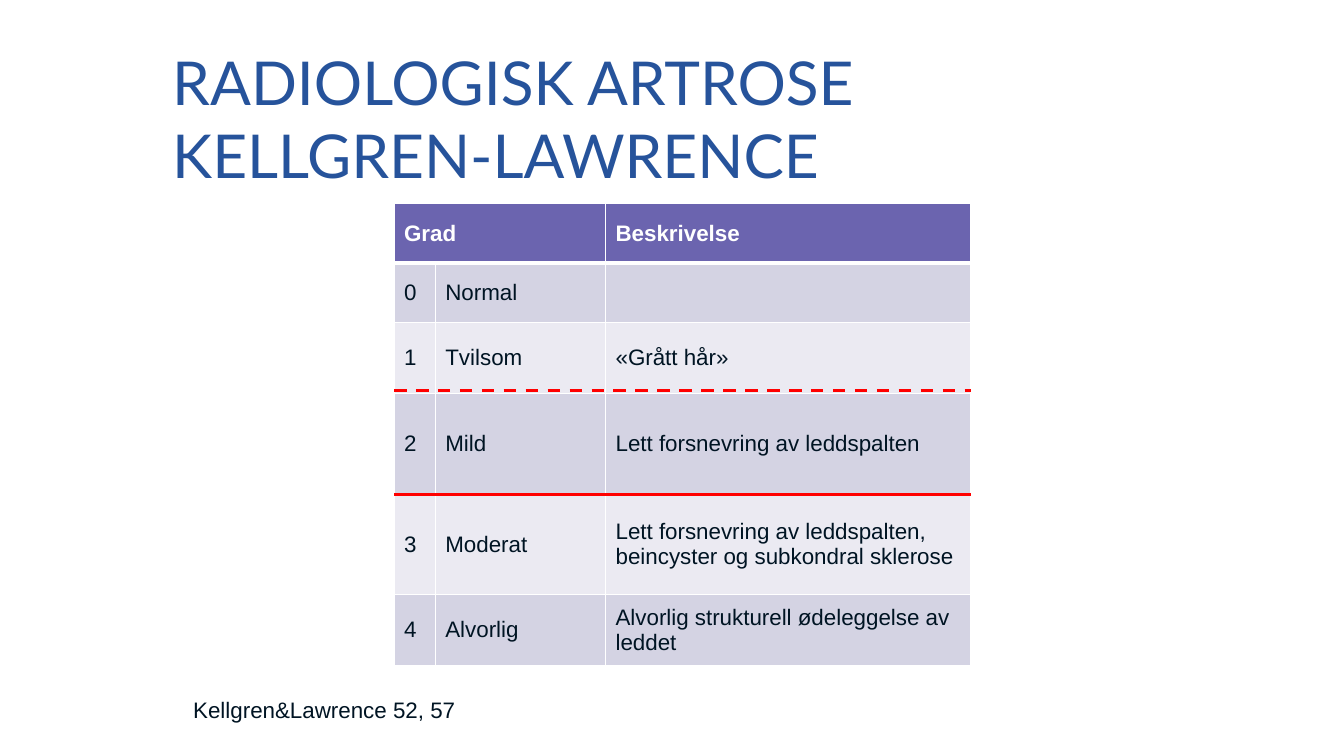
from lxml import etree
from pptx import Presentation
from pptx.dml.color import RGBColor
from pptx.enum.dml import MSO_LINE
from pptx.enum.shapes import MSO_CONNECTOR
from pptx.enum.text import MSO_ANCHOR, MSO_AUTO_SIZE, PP_ALIGN
from pptx.oxml.ns import qn
from pptx.util import Cm, Pt

DASH = MSO_LINE.DASH
STRAIGHT = MSO_CONNECTOR.STRAIGHT
TOP, MIDDLE = MSO_ANCHOR.TOP, MSO_ANCHOR.MIDDLE
NO_FIT = MSO_AUTO_SIZE.NONE
LEFT = PP_ALIGN.LEFT

BLUE = RGBColor(0x26, 0x53, 0x9B)
PURPLE = RGBColor(0x6B, 0x64, 0xAF)
LILAC = RGBColor(0xD4, 0xD3, 0xE3)
PALE = RGBColor(0xEB, 0xEA, 0xF2)
INK = RGBColor(0x00, 0x14, 0x23)
WHITE = RGBColor(0xFF, 0xFF, 0xFF)
RED = RGBColor(0xFF, 0x00, 0x00)

# Content
TITLE = "RADIOLOGISK ARTROSE\vKELLGREN-LAWRENCE"
GRADES = [
    ("Grad", "", "Beskrivelse"),
    ("0", "Normal", ""),
    ("1", "Tvilsom", "«Grått hår»"),
    ("2", "Mild", "Lett forsnevring av leddspalten"),
    ("3", "Moderat", "Lett forsnevring av leddspalten, beincyster og subkondral sklerose"),
    ("4", "Alvorlig", "Alvorlig strukturell ødeleggelse av leddet"),
]
CITATION = "Kellgren&Lawrence 52, 57"

# Layout in centimetres
TABLE_LEFT, TABLE_TOP = 9.93, 5.13
COLUMN_WIDTHS = (1.04, 4.29, 9.21)
ROW_HEIGHTS = (1.5, 1.5, 1.78, 2.54, 2.54, 1.78)
THRESHOLDS = [(9.83, DASH), (12.45, None)]  # height on the slide, dash style


def write(frame, text, font="Arial", size=16, color=INK, bold=False):
    para = frame.paragraphs[0]
    para.text = text
    para.alignment = LEFT
    para.font.name = font
    para.font.size = Pt(size)
    para.font.bold = bold
    para.font.color.rgb = color


def add_border(cell, side, points):
    line = etree.SubElement(cell._tc.get_or_add_tcPr(), qn(f"a:ln{side}"), w=str(Pt(points)))
    fill = etree.SubElement(line, qn("a:solidFill"))
    etree.SubElement(fill, qn("a:srgbClr"), val=str(WHITE))


def add_title(slide):
    title = slide.shapes.title
    title.left, title.top, title.width, title.height = Cm(4.34), Cm(1.14), Cm(30.48), Cm(2.16)
    frame = title.text_frame
    frame.margin_left = frame.margin_right = frame.margin_top = frame.margin_bottom = 0
    frame.auto_size = NO_FIT
    frame.vertical_anchor = TOP
    write(frame, TITLE, font="Lato", size=43.2, color=BLUE)


def add_grades(slide):
    table = slide.shapes.add_table(
        len(GRADES), len(COLUMN_WIDTHS), Cm(TABLE_LEFT), Cm(TABLE_TOP),
        Cm(sum(COLUMN_WIDTHS)), Cm(sum(ROW_HEIGHTS))).table
    for column, width in zip(table.columns, COLUMN_WIDTHS):
        column.width = Cm(width)
    for row, height in zip(table.rows, ROW_HEIGHTS):
        row.height = Cm(height)
    for r, texts in enumerate(GRADES):
        header = r == 0
        for c, text in enumerate(texts):
            cell = table.cell(r, c)
            for side in "LRTB":
                under_header = (r, side) in ((0, "B"), (1, "T"))
                add_border(cell, side, 3 if under_header else 1)
            cell.fill.solid()
            cell.fill.fore_color.rgb = PURPLE if header else LILAC if r % 2 else PALE
            cell.vertical_anchor = MIDDLE
            write(cell.text_frame, text, color=WHITE if header else INK, bold=header)
    table.cell(0, 0).merge(table.cell(0, 1))


def add_threshold(slide, y, dash):
    line = slide.shapes.add_connector(
        STRAIGHT, Cm(TABLE_LEFT), Cm(y), Cm(TABLE_LEFT + sum(COLUMN_WIDTHS)), Cm(y))
    line.line.color.rgb = RED
    line.line.width = Pt(2.25)
    if dash:
        line.line.dash_style = dash
    etree.SubElement(line._element.spPr, qn("a:effectLst"))


def main():
    deck = Presentation()
    deck.slide_width, deck.slide_height = Cm(33.87), Cm(19.05)
    slide = deck.slides.add_slide(deck.slide_layouts[5])  # title only

    add_title(slide)
    add_grades(slide)
    for y, dash in THRESHOLDS:
        add_threshold(slide, y, dash)

    # Citation
    box = slide.shapes.add_textbox(Cm(4.62), Cm(17.42), Cm(8.03), Cm(0.94))
    box.text_frame.word_wrap = True
    write(box.text_frame, CITATION)

    deck.save("out.pptx")


if __name__ == "__main__":
    main()
